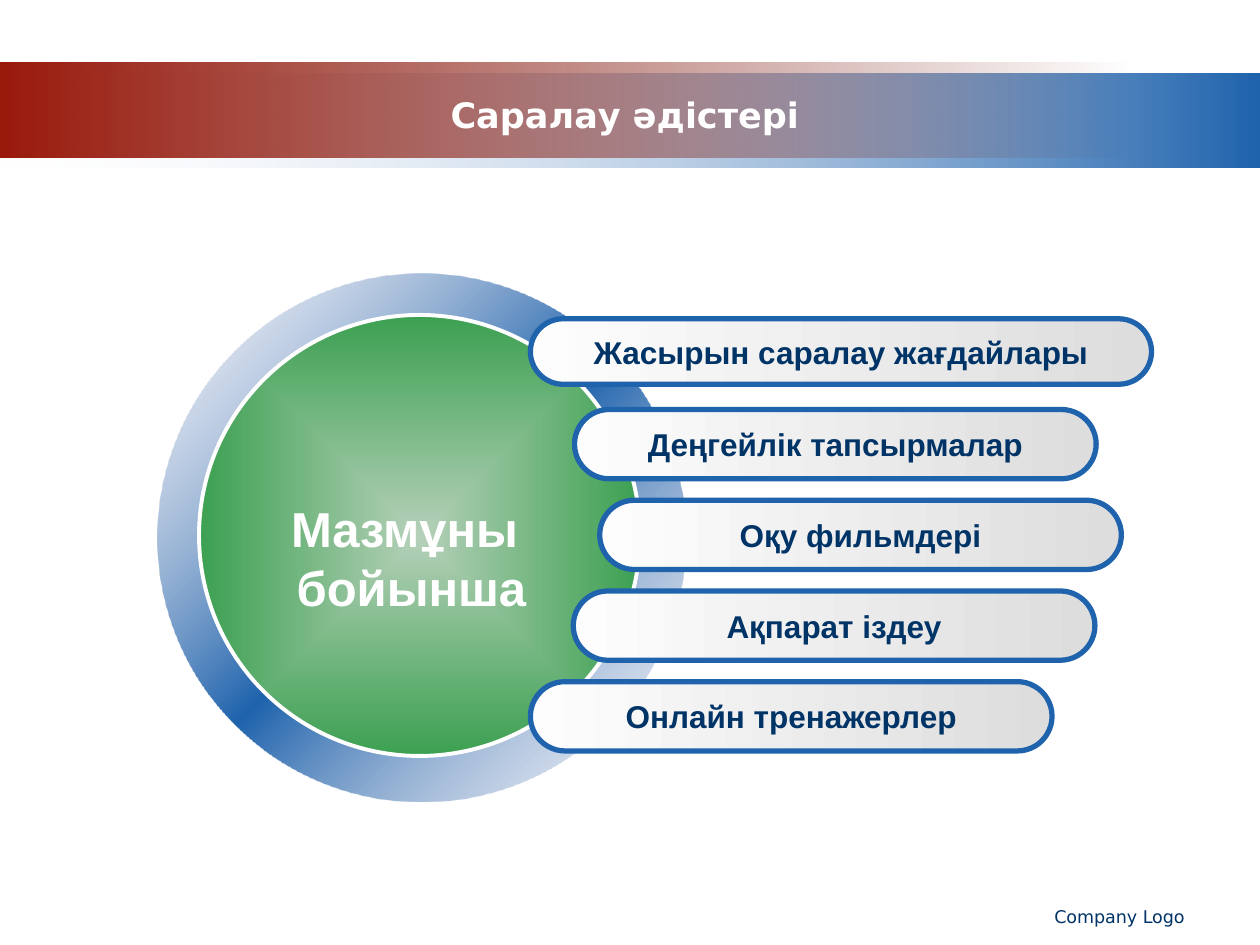
"""Build the slide on differentiation methods: a ring, a disc and five labels."""
from dataclasses import dataclass
from typing import Optional

import lxml.etree
import pptx
import pptx.dml.color
import pptx.enum.shapes
import pptx.enum.text
import pptx.oxml.ns
import pptx.util

Inches = pptx.util.Inches
Pt = pptx.util.Pt
Shape = pptx.enum.shapes.MSO_SHAPE
Align = pptx.enum.text.PP_ALIGN
qn = pptx.oxml.ns.qn

COLORS = {
    "blue": "1F63AD", "navy": "003366", "white": "FFFFFF", "black": "000000",
    "mist": "F1F2F7", "red": "99190B", "maroon": "6D1208", "haze": "ABB6D2",
    "pale_green": "B5D0B9", "green": "3CA051",
    "light_gray": "FDFDFD", "gray": "DDDDDD",
}
PILL_TOP, PILL_PITCH = 2.53, 0.72


@dataclass
class Stop:
    pos: int
    color: str
    alpha: int = 100


@dataclass
class Box:
    left: float
    top: float
    width: float
    height: float

    def emu(self) -> list:
        return [Inches(v) for v in (self.left, self.top, self.width, self.height)]


@dataclass
class Pill:
    text: str
    left: float
    width: float = 4.14
    height: float = 0.55


PILLS = [
    Pill("Жасырын саралау жағдайлары", 4.21, 4.93, 0.52),
    Pill("Деңгейлік тапсырмалар", 4.56),
    Pill("Оқу фильмдері", 4.76),
    Pill("Ақпарат іздеу", 4.55),
    Pill("Онлайн тренажерлер", 4.21),
]


def rgb(name: str) -> pptx.dml.color.RGBColor:
    return pptx.dml.color.RGBColor.from_string(COLORS[name])


def add_color(parent, name: str, alpha: int = 100) -> None:
    clr = lxml.etree.SubElement(parent, qn("a:srgbClr"), val=COLORS[name])
    if alpha < 100:
        lxml.etree.SubElement(clr, qn("a:alpha"), val=str(alpha * 1000))


def set_gradient(sp, stops: list[Stop], angle: Optional[int] = 0) -> None:
    """Fill with a linear gradient, or one from the centre if angle is None."""
    sp.fill.gradient()
    grad = sp.element.spPr.find(qn("a:gradFill"))
    grad.clear()
    grad.set("rotWithShape", "1")
    gs_lst = lxml.etree.SubElement(grad, qn("a:gsLst"))
    for stop in stops:
        gs = lxml.etree.SubElement(gs_lst, qn("a:gs"), pos=str(stop.pos * 1000))
        add_color(gs, stop.color, stop.alpha)
    if angle is None:
        shade = lxml.etree.SubElement(grad, qn("a:path"), path="shape")
        lxml.etree.SubElement(shade, qn("a:fillToRect"), l="50000", t="50000",
                              r="50000", b="50000")
    else:
        lxml.etree.SubElement(grad, qn("a:lin"), ang=str(angle * 60000), scaled="0")


def add_gradient_shape(slide, kind, box: Box, stops: list[Stop],
                       angle: Optional[int] = 0, line: Optional[str] = None,
                       line_width: float = 1):
    sp = slide.shapes.add_shape(kind, *box.emu())
    sp.shadow.inherit = False
    set_gradient(sp, stops, angle)
    if line:
        sp.line.color.rgb = rgb(line)
        sp.line.width = Pt(line_width)
    else:
        sp.line.fill.background()
    return sp


def set_text(tf, lines: list[str], size: int, color: str, font: str,
             bold: bool = False, align=Align.CENTER) -> None:
    tf.text = "\n".join(lines)
    for p in tf.paragraphs:
        p.alignment = align
        p.font.size = Pt(size)
        p.font.name = font
        p.font.bold = bold
        p.font.color.rgb = rgb(color)


def add_text_shadow(r) -> None:
    r_pr = r.font.fill and r._r.get_or_add_rPr()
    effects = lxml.etree.SubElement(r_pr, qn("a:effectLst"))
    shadow = lxml.etree.SubElement(effects, qn("a:outerShdw"), dist="35921", dir="2700000")
    add_color(shadow, "black")


def add_pill(slide, pill: Pill, top: float) -> None:
    sp = add_gradient_shape(slide, Shape.ROUNDED_RECTANGLE,
                            Box(pill.left, top, pill.width, pill.height),
                            [Stop(0, "light_gray"), Stop(100, "gray")],
                            line="blue", line_width=3)
    sp.adjustments[0] = 0.5
    tf = sp.text_frame
    tf.word_wrap = False
    tf.vertical_anchor = pptx.enum.text.MSO_ANCHOR.MIDDLE
    set_text(tf, [pill.text], 18, "navy", "Arial", bold=True)


def add_header(slide) -> None:
    add_gradient_shape(slide, Shape.RECTANGLE, Box(0, 0.58, 10, 0.75),
                       [Stop(0, "mist", 0), Stop(100, "blue")])
    add_gradient_shape(slide, Shape.RECTANGLE, Box(0, 0.5, 9, 0.75),
                       [Stop(0, "red"), Stop(100, "maroon", 0)])
    title = slide.shapes.title
    title.left, title.top, title.width, title.height = Box(0.92, 0.6, 8.08, 0.62).emu()
    tf = title.text_frame
    tf.auto_size = pptx.enum.text.MSO_AUTO_SIZE.NONE
    tf.vertical_anchor = pptx.enum.text.MSO_ANCHOR.MIDDLE
    set_text(tf, ["Саралау әдістері"], 20, "white", "DejaVu Sans", bold=True)
    slide.shapes.element.append(title.element)


def add_footer(slide) -> None:
    tf = slide.shapes.add_textbox(*Box(6.33, 7.14, 3.17, 0.3).emu()).text_frame
    tf.word_wrap = True
    set_text(tf, ["Company Logo"], 10, "navy", "DejaVu Sans", align=Align.RIGHT)


def add_disc(slide) -> None:
    ring = add_gradient_shape(slide, Shape.DONUT, Box(1.25, 2.17, 4.19, 4.19),
                              [Stop(0, "haze", 12), Stop(50, "blue"),
                               Stop(100, "haze", 12)], angle=45)
    ring.adjustments[0] = 0.37 / 4.19
    add_gradient_shape(slide, Shape.OVAL, Box(1.58, 2.5, 3.5, 3.5),
                       [Stop(0, "pale_green"), Stop(100, "green")],
                       angle=None, line="white", line_width=2.25)


def add_disc_label(slide) -> None:
    tf = slide.shapes.add_textbox(*Box(2.2, 3.91, 2.13, 1.04).emu()).text_frame
    tf.word_wrap = False
    tf.auto_size = pptx.enum.text.MSO_AUTO_SIZE.SHAPE_TO_FIT_TEXT
    set_text(tf, ["Мазмұны ", "бойынша"], 28, "white", "Arial", bold=True)
    for p in tf.paragraphs:
        for r in p.runs:
            add_text_shadow(r)


def main() -> None:
    prs = pptx.Presentation()
    prs.slide_width, prs.slide_height = Inches(10), Inches(7.5)
    slide = prs.slides.add_slide(prs.slide_layouts[5])
    add_header(slide)
    add_footer(slide)
    add_disc(slide)
    for i, pill in enumerate(PILLS):
        add_pill(slide, pill, PILL_TOP + i * PILL_PITCH)
    add_disc_label(slide)
    prs.save("out.pptx")


if __name__ == "__main__":
    main()
